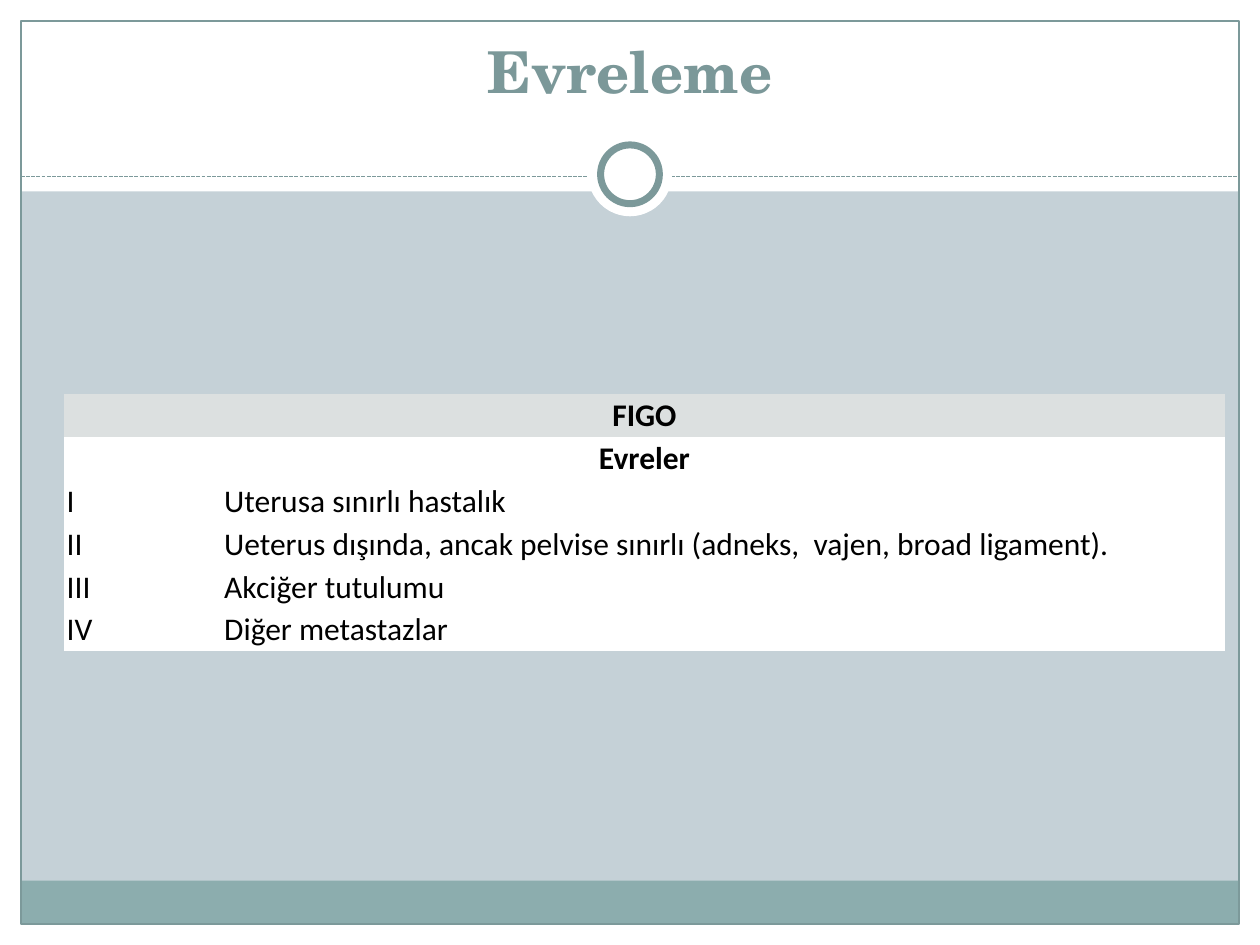
import pptx
import pptx.util
import pptx.dml.color
import pptx.enum.dml
import pptx.enum.shapes
import pptx.enum.text
import pptx.oxml

theme = {
    "back": "C5D1D7", "white": "FFFFFF", "foot": "8CADAE", "line": "7C999A",
    "title": "7B9899", "head": "DCE0E0", "text": "000000",
    "serif": "TeX Gyre Schola", "sans": "Calibri",
    "big": 33, "body": 18, "thin": 0.75, "thick": 4,
}
align = pptx.enum.text.PP_ALIGN
kind = pptx.enum.shapes.MSO_SHAPE
pt = pptx.util.Pt
cols, rows = 60, 45

deck = pptx.Presentation()
deck.slide_width = pptx.util.Inches(10)
deck.slide_height = pptx.util.Inches(7.5)
unit = deck.slide_width / cols
slide = deck.slides.add_slide(deck.slide_layouts[6])
shapes = slide.shapes


def grid(*cells):
    return [round(cell * unit) for cell in cells]


def tint(name):
    return pptx.dml.color.RGBColor.from_string(theme[name])


slide.background.fill.solid()
slide.background.fill.fore_color.rgb = tint("back")

parts = [
    (kind.RECTANGLE, (0, rows - 1, cols, 1), "white", None),
    (kind.RECTANGLE, (0, 0, cols, 9.12), "white", None),
    (kind.RECTANGLE, (0, 0, 1, rows), "white", None),
    (kind.RECTANGLE, (cols - 1, 0, 1, rows), "white", None),
    (kind.RECTANGLE, (1, 41.94, cols - 2, 2.06), "foot", None),
    (kind.RECTANGLE, (1, 1, cols - 2, rows - 2), None, "thin"),
    (None, (1, 8.4, cols - 1, 8.4), None, "thin"),
    (kind.OVAL, (28, 6.3, 4, 4), "white", None),
    (kind.OVAL, (28.6, 6.9, 2.8, 2.8), "white", "thick"),
]
for form, place, fill, line in parts:
    if form is None:
        part = shapes.add_connector(pptx.enum.shapes.MSO_CONNECTOR.STRAIGHT, *grid(*place))
        part.line.dash_style = pptx.enum.dml.MSO_LINE.SQUARE_DOT
        part._element.spPr.append(pptx.oxml.parse_xml(
            '<a:effectLst xmlns:a="http://schemas.openxmlformats.org/drawingml/2006/main"/>'))
    else:
        part = shapes.add_shape(form, *grid(*place))
        part.shadow.inherit = False
        if fill:
            part.fill.solid()
            part.fill.fore_color.rgb = tint(fill)
        else:
            part.fill.background()
    if line:
        part.line.color.rgb = tint("line")
        part.line.width = pt(theme[line])
    else:
        part.line.fill.background()

title = shapes.add_textbox(*grid(2, 0.3, cols - 4, 5)).text_frame
title.word_wrap = True
title.vertical_anchor = pptx.enum.text.MSO_ANCHOR.BOTTOM
title.text = "Evreleme"
title.paragraphs[0].alignment = align.CENTER
looks = [(title.paragraphs[0].font, "title",
          {"name": theme["serif"], "size": pt(theme["big"]), "bold": True})]

stages = [
    ("FIGO", ""),
    ("Evreler", ""),
    ("I", "Uterusa sınırlı hastalık"),
    ("II", "Ueterus dışında, ancak pelvise sınırlı (adneks,  vajen, broad ligament)."),
    ("III", "Akciğer tutulumu"),
    ("IV", "Diğer metastazlar"),
]
wide = (7.5, 47.76)
high = 2.04
table = shapes.add_table(len(stages), len(wide),
                         *grid(3.06, 18.78, sum(wide), high * len(stages))).table
table.first_row = table.horz_banding = False
table._tbl.tblPr[0].text = "{2D5ABB26-0587-4C30-8999-92F81FD0307C}"
for col, size in zip(table.columns, grid(*wide)):
    col.width = size
inset = pptx.util.Inches(0.02)
pads = {f"margin_{side}": inset for side in ("left", "right", "top", "bottom")}
for r, stage in enumerate(stages):
    table.rows[r].height = grid(high)[0]
    span = not stage[1]
    if span:
        table.cell(r, 0).merge(table.cell(r, 1))
    for c, text in enumerate(stage):
        cell = table.cell(r, c)
        cell.fill.solid()
        cell.fill.fore_color.rgb = tint("white" if r else "head")
        for key, value in pads.items():
            setattr(cell, key, value)
        if text:
            cell.text = text
        para = cell.text_frame.paragraphs[0]
        para.alignment = align.CENTER if span else align.LEFT
        looks.append((para.font, "text",
                      {"name": theme["sans"], "size": pt(theme["body"]), "bold": span}))

for font, color, look in looks:
    font.color.rgb = tint(color)
    for key, value in look.items():
        setattr(font, key, value)

deck.save("out.pptx")
